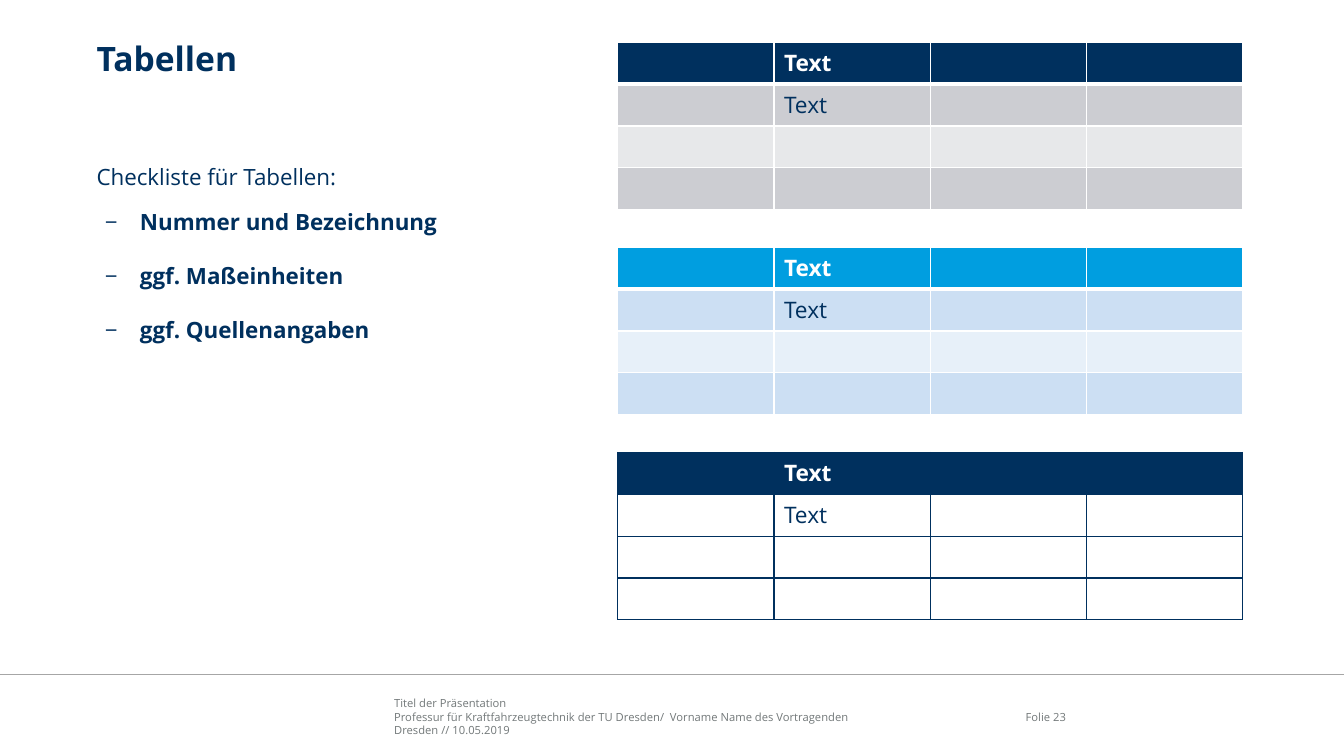
"""Build the slide "Tabellen" with a checklist and three table styles."""
from lxml import etree
from pptx import Presentation
from pptx.dml.color import RGBColor
from pptx.enum import shapes, text
from pptx.oxml import ns
from pptx.util import Pt

FONT = "Open Sans"
NAVY = RGBColor(0x00, 0x30, 0x5E)
CYAN = RGBColor(0x00, 0x9E, 0xE0)
WHITE = RGBColor(0xFF, 0xFF, 0xFF)
GREY_DARK = RGBColor(0xCC, 0xCD, 0xD2)
GREY_LIGHT = RGBColor(0xE7, 0xE8, 0xEA)
BLUE_DARK = RGBColor(0xCC, 0xDF, 0xF3)
BLUE_LIGHT = RGBColor(0xE7, 0xF0, 0xF9)
RULE = RGBColor(0xA6, 0xA6, 0xA6)
FOOTER = RGBColor(0x72, 0x78, 0x79)


def add_run(p, content, size, color, bold=False):
    r = p.add_run()
    r.text = content
    r.font.name = FONT
    r.font.size = Pt(size)
    r.font.bold = bold
    r.font.color.rgb = color


def set_frame(sp, left, top, width, height, anchor=text.MSO_ANCHOR.TOP):
    sp.left, sp.top, sp.width, sp.height = Pt(left), Pt(top), Pt(width), Pt(height)
    tf = sp.text_frame
    tf.word_wrap = True
    tf.auto_size = text.MSO_AUTO_SIZE.NONE
    tf.vertical_anchor = anchor
    tf.margin_left = tf.margin_top = tf.margin_right = tf.margin_bottom = 0
    return tf


prs = Presentation()
prs.slide_width, prs.slide_height = Pt(960), Pt(540)
s = prs.slides.add_slide(prs.slide_layouts[5])

footer = s.shapes.add_textbox(0, 0, 0, 0)
tf = set_frame(footer, 281.5, 495.5, 408, 33, text.MSO_ANCHOR.MIDDLE)
footer_lines = [
    "Titel der Präsentation",
    "Professur für Kraftfahrzeugtechnik der TU Dresden/  Vorname Name des Vortragenden",
    "Dresden // 10.05.2019",
]
for i, line in enumerate(footer_lines):
    p = tf.add_paragraph() if i else tf.paragraphs[0]
    add_run(p, line, 8, FOOTER)

rule = s.shapes.add_connector(shapes.MSO_CONNECTOR.STRAIGHT, 0, Pt(482), Pt(960), Pt(482))
rule.line.color.rgb = RULE
rule.line.width = Pt(1)
etree.SubElement(rule._element.spPr, ns.qn("a:effectLst"))

number = s.shapes.add_textbox(0, 0, 0, 0)
tf = set_frame(number, 706, 495.5, 55.5, 33, text.MSO_ANCHOR.MIDDLE)
p = tf.paragraphs[0]
p.alignment = text.PP_ALIGN.RIGHT
add_run(p, "Folie 23", 8, FOOTER)

tf = set_frame(s.shapes.title, 69, 27, 833, 54)
p = tf.paragraphs[0]
p.alignment = text.PP_ALIGN.LEFT
add_run(p, "Tabellen", 24, NAVY, True)

checklist = s.shapes.add_textbox(0, 0, 0, 0)
tf = set_frame(checklist, 69, 116.5, 304.5, 342)
add_run(tf.paragraphs[0], "Checkliste für Tabellen:", 16, NAVY)
for item in ["Nummer und Bezeichnung", "ggf. Maßeinheiten", "ggf. Quellenangaben"]:
    p = tf.add_paragraph()
    pPr = p._p.get_or_add_pPr()
    pPr.set("marL", str(Pt(31)))
    pPr.set("indent", str(-Pt(25)))
    etree.SubElement(pPr, ns.qn("a:buFont"), typeface=FONT)
    etree.SubElement(pPr, ns.qn("a:buChar"), char="−")
    p.space_before, p.space_after = Pt(13.2), Pt(6)
    add_run(p, item, 16, NAVY, True)

table_styles = [
    (NAVY, GREY_DARK, GREY_LIGHT, WHITE, 3),
    (CYAN, BLUE_DARK, BLUE_LIGHT, WHITE, 3),
    (NAVY, WHITE, WHITE, NAVY, 1),
]
for i, (head, odd, even, border, head_rule) in enumerate(table_styles):
    frame = s.shapes.add_table(4, 4, Pt(441.2), Pt(30.2 + 146.5 * i), Pt(446.4), Pt(119.6))
    table = frame.table
    table.horz_banding = False
    for col in table.columns:
        col.width = Pt(111.6)
    for row, fill in enumerate([head, odd, even, odd]):
        table.rows[row].height = Pt(29.9)
        for cell in table.rows[row].cells:
            tcPr = cell._tc.get_or_add_tcPr()
            for side in "LRTB":
                thick = (row, side) in [(0, "B"), (1, "T")]
                width = Pt(head_rule if thick else 1)
                ln = etree.SubElement(tcPr, ns.qn(f"a:ln{side}"), w=str(width))
                solid = etree.SubElement(ln, ns.qn("a:solidFill"))
                etree.SubElement(solid, ns.qn("a:srgbClr"), val=str(border))
            cell.fill.solid()
            cell.fill.fore_color.rgb = fill
    add_run(table.cell(0, 1).text_frame.paragraphs[0], "Text", 16.2, WHITE, True)
    add_run(table.cell(1, 1).text_frame.paragraphs[0], "Text", 16.2, NAVY)

prs.save("out.pptx")
